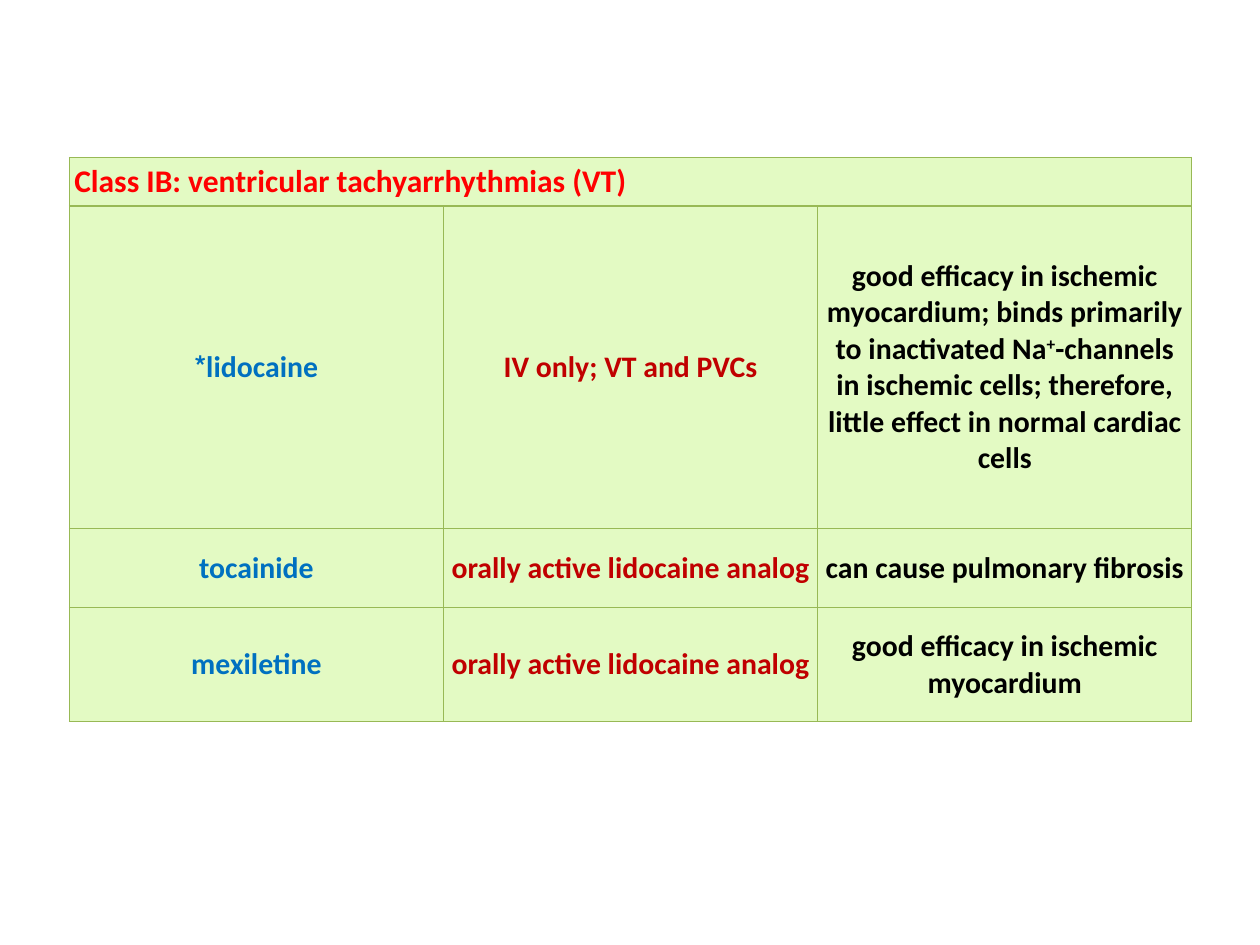
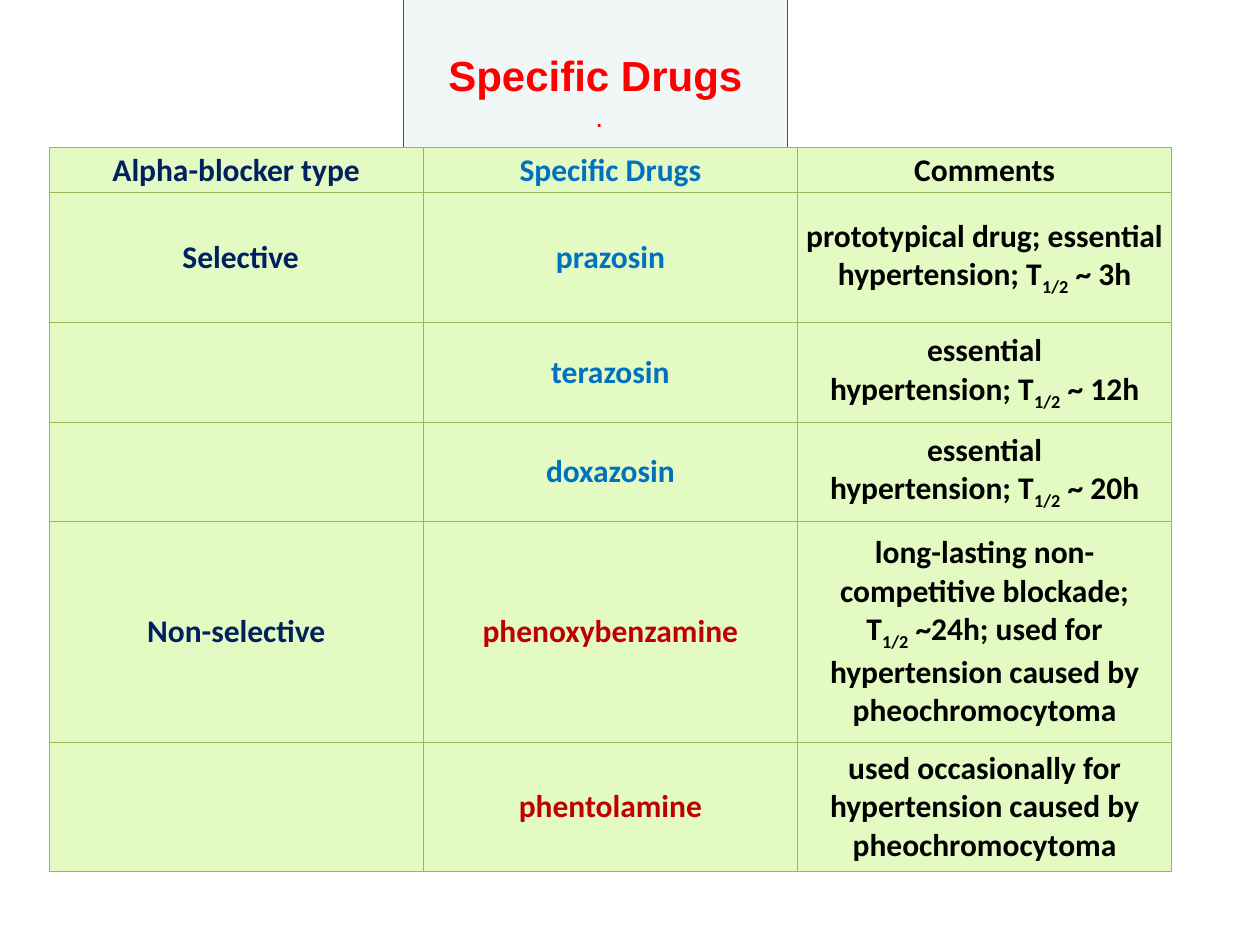
import pptx
import pptx.util
import pptx.dml.color
import pptx.enum.text
from lxml import etree

Inches, Pt = pptx.util.Inches, pptx.util.Pt
RGB = pptx.dml.color.RGBColor
ALIGN = pptx.enum.text.PP_ALIGN
MIDDLE = pptx.enum.text.MSO_ANCHOR.MIDDLE
GROW = pptx.enum.text.MSO_AUTO_SIZE.SHAPE_TO_FIT_TEXT

LIME = RGB(0xE3, 0xFA, 0xC3)
OLIVE = RGB(0x98, 0xB9, 0x55)
PALE = RGB(0xF1, 0xF7, 0xF7)
RED = RGB(0xFF, 0x00, 0x00)
CRIMSON = RGB(0xC0, 0x00, 0x00)
BLUE = RGB(0x00, 0x70, 0xC0)
NAVY = RGB(0x00, 0x20, 0x60)
BLACK = RGB(0x00, 0x00, 0x00)

NB = chr(160)  # no-break space
HALF = "T|1/2|" + NB
WIDTH = 2.97
SUPER, SUB = 30000, -25000
TITLE_ONLY, BLANK = 5, 6

CLASS_IB = [
    ("lidocaine*", "IV only; VT and PVCs",
     "good efficacy in ischemic myocardium; binds primarily to inactivated Na|+|"
     "-channels in ischemic cells; therefore, little effect in normal cardiac cells"),
    ("tocainide", "orally active lidocaine analog", "can cause pulmonary fibrosis"),
    ("mexiletine", "orally active lidocaine analog",
     "good efficacy in ischemic myocardium"),
]
ALPHA = [
    ("Alpha-blocker type", "Specific Drugs", "Comments"),
    ("Selective" + NB, "prazosin",
     f"prototypical drug; essential hypertension; {HALF}~ 3h"),
    ("", "terazosin", f"essential hypertension;{NB}{HALF}~ 12h"),
    ("", "doxazosin", f"essential hypertension;{NB}{HALF}~ 20h"),
    ("Non-selective", "phenoxybenzamine",
     f"long-lasting non-competitive blockade; {HALF}~24h; "
     "used for hypertension caused by pheochromocytoma"),
    ("", "phentolamine",
     "used occasionally for hypertension caused by pheochromocytoma"),
]


class Deck:
    def __init__(self):
        self.prs = pptx.Presentation()
        self.prs.slide_width, self.prs.slide_height = Inches(10), Inches(7.5)
        self.slide = None

    def start(self, layout):
        self.slide = self.prs.slides.add_slide(self.prs.slide_layouts[layout])

    def style(self, para, size, color, face="Calibri", bold=True,
              align=ALIGN.CENTER, rtl=True):
        font = para.font
        font.name, font.size, font.bold = face, Pt(size), bold
        font.color.rgb = color
        para.alignment = align
        if rtl:
            para._p.get_or_add_pPr().set("rtl", "1")

    def title(self, text, mark, left, top, width, height):
        box = self.slide.shapes.title
        box.left, box.top = Inches(left), Inches(top)
        box.width, box.height = Inches(width), Inches(height)
        box.fill.solid()
        box.fill.fore_color.rgb = PALE
        box.line.color.rgb = RED
        box.line.width = Pt(0.75)
        frame = box.text_frame
        frame.margin_left = frame.margin_right = frame.margin_bottom = 0
        frame.margin_top = Inches(0.08)
        frame.vertical_anchor = MIDDLE
        frame.auto_size = GROW
        frame.text = f"{text}\n{mark}"
        head, tail = frame.paragraphs
        self.style(head, 24, RED, "Arial")
        self.style(tail, 16, RED, "Arial", bold=False, rtl=False)

    def grid(self, left, top, heights, pad):
        """Add an empty three-column table and return it."""
        frame = self.slide.shapes.add_table(
            len(heights), 3, Inches(left), Inches(top),
            Inches(3 * WIDTH), Inches(sum(heights)))
        table = frame.table
        table.first_row = table.horz_banding = False
        for col in table.columns:
            col.width = Inches(WIDTH)
        for row, height in zip(table.rows, heights):
            row.height = Inches(height)
        for cell in table.iter_cells():
            cell.margin_left = cell.margin_right = Inches(pad)
            cell.margin_top = cell.margin_bottom = Inches(pad)
            cell.vertical_anchor = MIDDLE
            self.border(cell)
            cell.fill.solid()
            cell.fill.fore_color.rgb = LIME
        return table

    def border(self, cell):
        props = cell._tc.get_or_add_tcPr()
        space = "{%s}" % props.nsmap["a"]
        for side in ("lnL", "lnR", "lnT", "lnB"):
            line = etree.SubElement(props, space + side, w=str(Pt(0.75)))
            fill = etree.SubElement(line, space + "solidFill")
            etree.SubElement(fill, space + "srgbClr", val=str(OLIVE))

    def label(self, cell, text, size, color, shift=0, align=ALIGN.CENTER):
        """Fill a cell; text between bars is raised or lowered by shift."""
        para = cell.text_frame.paragraphs[0]
        self.style(para, size, color, align=align)
        if not text:
            return
        for i, part in enumerate(text.split("|")):
            run = para.add_run()
            run.text = part
            if i % 2:
                run._r.get_or_add_rPr().set("baseline", str(shift))


def main():
    deck = Deck()

    deck.start(BLANK)
    table = deck.grid(0.55, 1.25, [0.35, 2.56, 0.63, 0.9], 0.04)
    table.cell(0, 0).merge(table.cell(0, 2))
    deck.label(table.cell(0, 0), f"Class IB:{NB}ventricular tachyarrhythmias (VT)",
               18, RED, align=None)
    for r, row in enumerate(CLASS_IB, 1):
        for c, (text, color) in enumerate(zip(row, (BLUE, CRIMSON, BLACK))):
            deck.label(table.cell(r, c), text, 17, color, SUPER)

    deck.start(TITLE_ONLY)
    table = deck.grid(0.39, 1.17, [0.31, 1.03, 0.79, 0.79, 1.75, 1.03], 0.03)
    for r, row in enumerate(ALPHA):
        drug = BLUE if r < 4 else CRIMSON
        for c, (text, color) in enumerate(zip(row, (NAVY, drug, BLACK))):
            deck.label(table.cell(r, c), text, 18, color, SUB)
    deck.title("Specific Drugs", " .", 3.2, 0.31, 3.05, 0.75)

    deck.prs.save("out.pptx")


if __name__ == "__main__":
    main()
